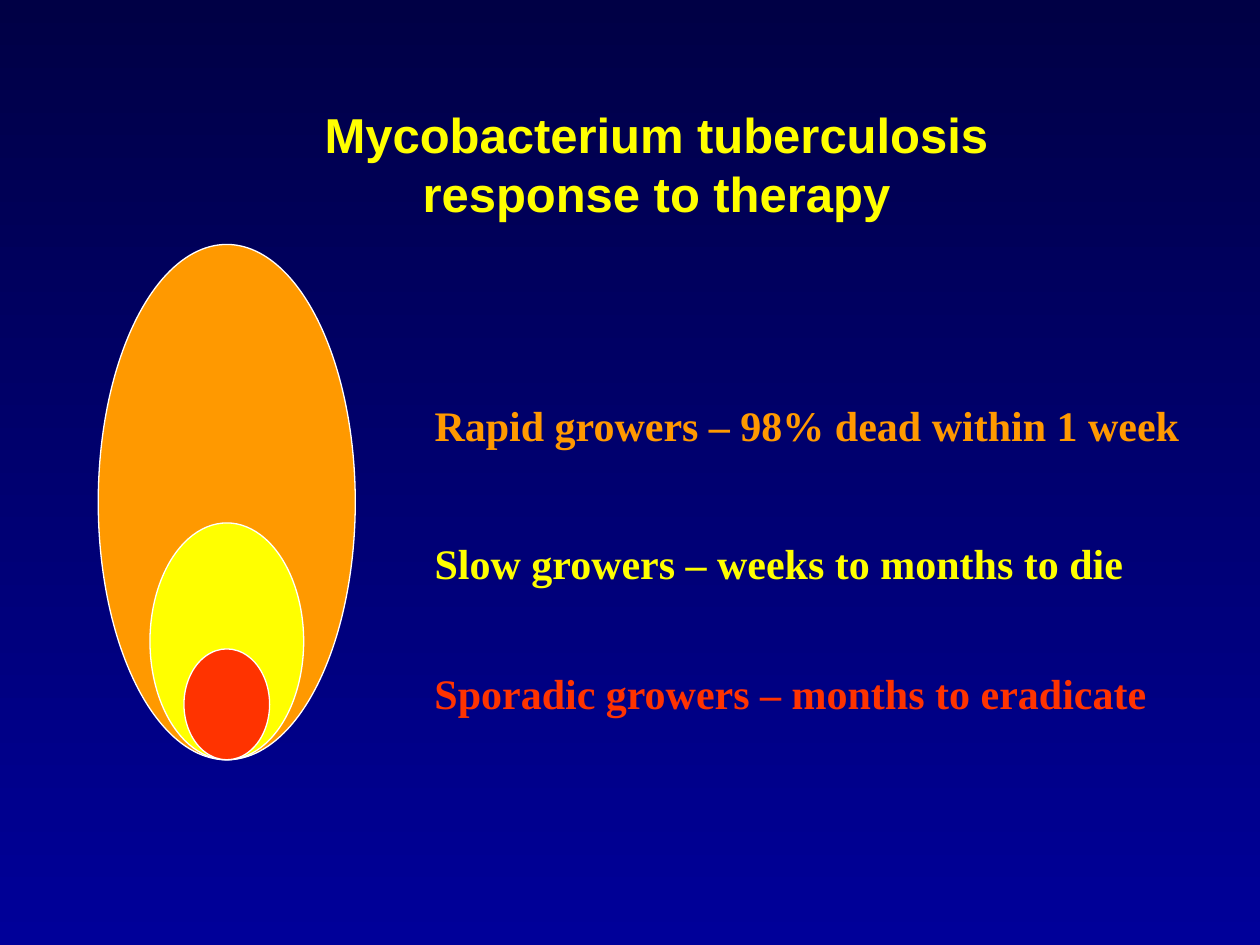
from pptx import Presentation
from pptx.dml.color import RGBColor
from pptx.enum.shapes import MSO_SHAPE
from pptx.enum.text import MSO_ANCHOR, PP_ALIGN
from pptx.util import Inches, Pt

OVAL = MSO_SHAPE.OVAL
MIDDLE, TOP = MSO_ANCHOR.MIDDLE, MSO_ANCHOR.TOP
CENTER, LEFT = PP_ALIGN.CENTER, PP_ALIGN.LEFT
ORANGE, YELLOW, RED = "FF9900", "FFFF00", "FF3300"


def rgb(value):
    return RGBColor.from_string(value)


def add_text(s, box, text, font, size, color, align, anchor, wrap):
    tf = s.shapes.add_textbox(*map(Inches, box)).text_frame
    tf.word_wrap = wrap
    tf.vertical_anchor = anchor
    p = tf.paragraphs[0]
    p.text = text
    p.alignment = align
    p.font.name = font
    p.font.size = Pt(size)
    p.font.bold = True
    p.font.color.rgb = rgb(color)


prs = Presentation()
prs.slide_width, prs.slide_height = Inches(10), Inches(7.5)
s = prs.slides.add_slide(prs.slide_layouts[6])

fill = s.background.fill
fill.gradient()
fill.gradient_angle = 270
for stop, color in zip(fill.gradient_stops, ("000045", "000099")):
    stop.color.rgb = rgb(color)

add_text(s, (0.43, 0.67, 9.56, 1.25),
         "Mycobacterium tuberculosis\nresponse to therapy",
         "Arial", 28, YELLOW, CENTER, MIDDLE, True)

center, base = 1.8, 6.03
growers = [
    (ORANGE, 2.04, 4.09, 3.12, 6.12, "Rapid growers – 98% dead within 1 week"),
    (YELLOW, 1.22, 1.88, 4.22, 5.68, "Slow growers – weeks to months to die"),
    (RED, 0.68, 0.88, 5.25, 5.86, "Sporadic growers – months to eradicate"),
]
for color, w, h, top, text_w, text in growers:
    sp = s.shapes.add_shape(OVAL, Inches(center - w / 2), Inches(base - h),
                            Inches(w), Inches(h))
    sp.shadow.inherit = False
    sp.fill.solid()
    sp.fill.fore_color.rgb = rgb(color)
    sp.line.color.rgb = rgb("FFFFFF")
    sp.line.width = Pt(0.75)
    add_text(s, (3.35, top, text_w, 0.5), text,
             "Times New Roman", 24, color, LEFT, TOP, False)

prs.save("out.pptx")
